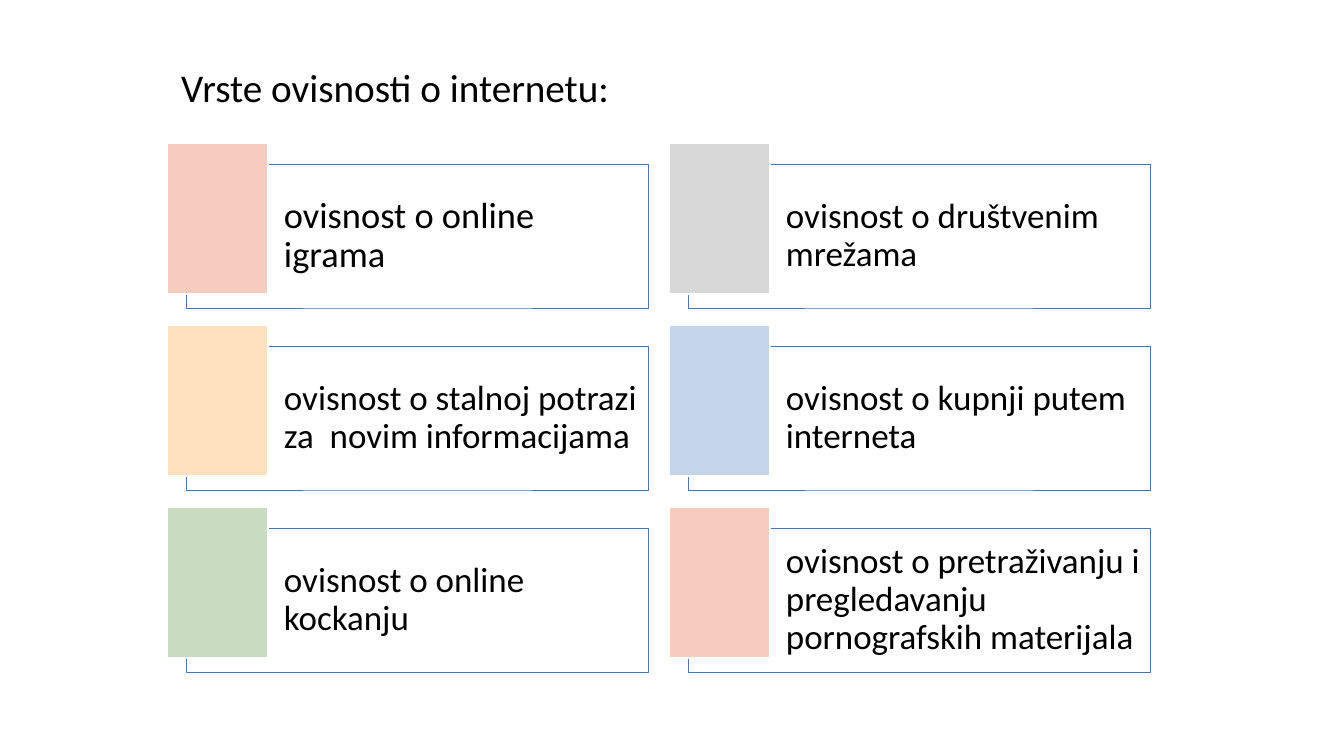
"""Builds a slide listing six kinds of internet addiction as a grid of cards."""
from lxml import etree
from pptx import Presentation
from pptx.dml.color import RGBColor
from pptx.enum.shapes import MSO_SHAPE
from pptx.enum.text import MSO_ANCHOR, PP_ALIGN
from pptx.oxml.ns import qn
from pptx.util import Emu, Pt

RECTANGLE = MSO_SHAPE.RECTANGLE
TOP, MIDDLE = MSO_ANCHOR.TOP, MSO_ANCHOR.MIDDLE
LEFT = PP_ALIGN.LEFT
TITLE_ONLY = 5
EMU_PER_PX = 914400 / 100.8

COLUMNS = 2
FIRST_X, FIRST_Y = 186, 164
STEP_X, STEP_Y = 502, 182
CARD_WIDTH, CARD_HEIGHT = 462, 144
TAB_WIDTH, TAB_HEIGHT = 101, 151
TAB_SHIFT_X, TAB_SHIFT_Y = 19, 21

CARDS = [
    ("ovisnost o online igrama", 26, "F6CCBE"),
    ("ovisnost o društvenim mrežama", 25, "D8D8D8"),
    ("ovisnost o stalnoj potrazi za  novim informacijama", 25, "FFE2BD"),
    ("ovisnost o kupnji putem interneta", 25, "C4D5EB"),
    ("ovisnost o online kockanju", 25, "C9DBC1"),
    ("ovisnost o pretraživanju i pregledavanju pornografskih materijala", 25, "F6CCBE"),
]


def px(length):
    return Emu(round(length * EMU_PER_PX))


def color(hex_code):
    return RGBColor.from_string(hex_code)


presentation = Presentation()
presentation.slide_width, presentation.slide_height = px(1344), px(756)
slide = presentation.slides.add_slide(presentation.slide_layouts[TITLE_ONLY])

title = slide.shapes.title
title.left, title.top, title.width, title.height = px(171), px(58), px(669), px(57)
title.text_frame.vertical_anchor = TOP
texts = [(title, "Vrste ovisnosti o internetu:", 28)]

for index, (label, size, tab_color) in enumerate(CARDS):
    row, column = divmod(index, COLUMNS)
    x = FIRST_X + column * STEP_X
    y = FIRST_Y + row * STEP_Y

    card = slide.shapes.add_shape(RECTANGLE, px(x), px(y), px(CARD_WIDTH), px(CARD_HEIGHT))
    tab = slide.shapes.add_shape(
        RECTANGLE, px(x - TAB_SHIFT_X), px(y - TAB_SHIFT_Y), px(TAB_WIDTH), px(TAB_HEIGHT)
    )
    for shape, fill, line, weight in (
        (card, "FFFFFF", "4472C4", 0.5),
        (tab, tab_color, "FFFFFF", 1),
    ):
        shape.shadow.inherit = False
        shape.fill.solid()
        shape.fill.fore_color.rgb = color(fill)
        shape.line.color.rgb = color(line)
        shape.line.width = Pt(weight)

    white = card.fill._xPr.find(qn("a:solidFill")).find(qn("a:srgbClr"))
    etree.SubElement(white, qn("a:alpha"), val="40000")

    frame = card.text_frame
    frame.word_wrap = True
    frame.vertical_anchor = MIDDLE
    frame.margin_left = px(98)
    frame.margin_right = frame.margin_top = frame.margin_bottom = px(10)
    frame.paragraphs[0].line_spacing = 0.9
    texts.append((card, label, size))

for shape, text, size in texts:
    paragraph = shape.text_frame.paragraphs[0]
    paragraph.alignment = LEFT
    run = paragraph.add_run()
    run.text = text
    run.font.name = "Calibri"
    run.font.size = Pt(size)
    run.font.color.rgb = color("000000")

presentation.save("out.pptx")
